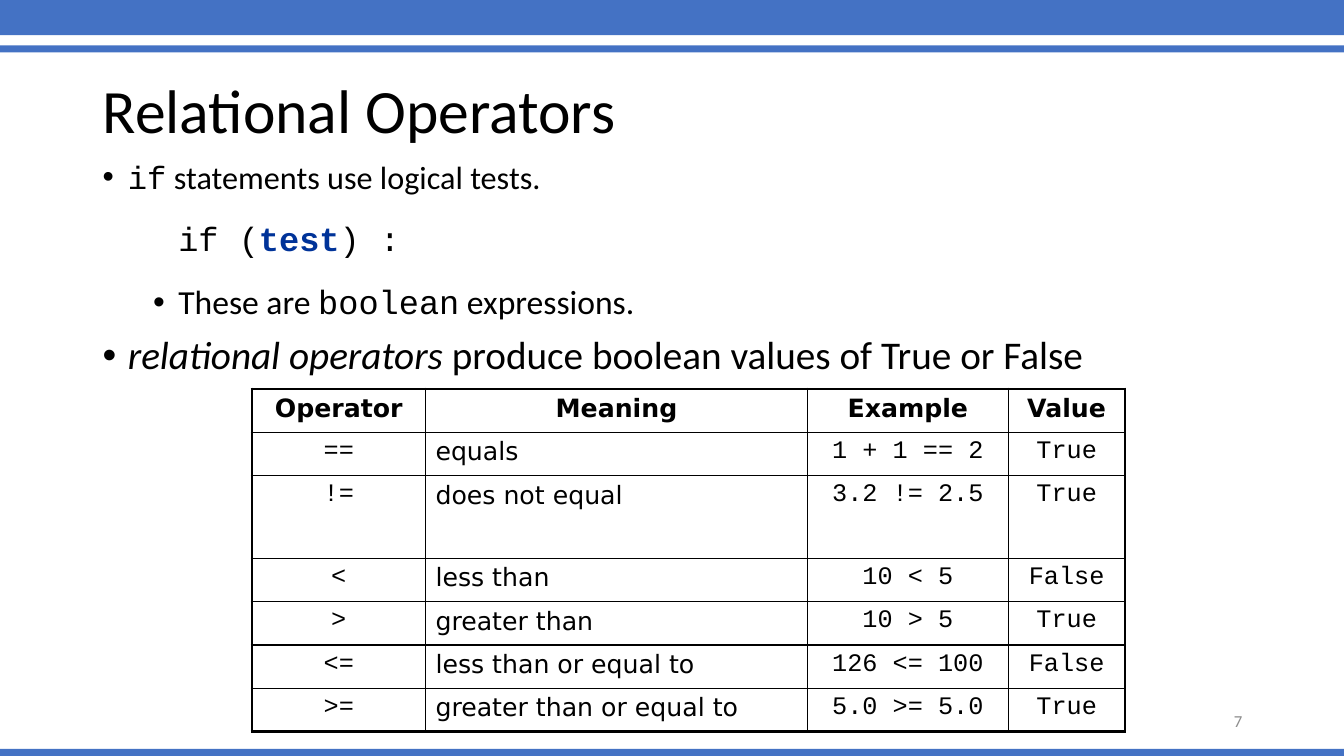
from lxml import etree
from pptx import Presentation
from pptx import util as u
from pptx.dml.color import RGBColor
from pptx.enum import shapes, text
from pptx.oxml.ns import qn

BLACK = RGBColor(0x00, 0x00, 0x00)
BLUE = RGBColor(0x44, 0x72, 0xC4)
NAVY = RGBColor(0x00, 0x33, 0x99)
GREY = RGBColor(0x8C, 0x8C, 0x8C)
SANS, MONO, WIDE = "Calibri", "Courier New", "DejaVu Sans"
LEFT, MID, RIGHT = text.PP_ALIGN.LEFT, text.PP_ALIGN.CENTER, text.PP_ALIGN.RIGHT

WIDTH, HEIGHT = 1333, 750
BARS = [(0, 35), (45, 7), (743, 7)]  # top, height
TITLE = "Relational Operators"
PAGE = "7"

# margin in px, bullet, space before in points, size, runs (words, font, style)
POINTS = [
    (25, True, 10, 23, [("if", MONO, {}), (" statements use logical tests.", SANS, {})]),
    (75, False, 19, 24, [("if (", MONO, {}),
                         ("test", MONO, {"color": NAVY, "bold": True}),
                         (") :", MONO, {})]),
    (75, True, 19, 24, [("These are ", SANS, {}), ("boolean", MONO, {}),
                        (" expressions.", SANS, {})]),
    (25, True, 10, 28, [("relational operators", SANS, {"italic": True}),
                        (" produce boolean values of True or False", SANS, {})]),
]

ROWS = [
    ("Operator", "Meaning", "Example", "Value"),
    ("==", "equals", "1 + 1 == 2", "True"),
    ("!=", "does not equal", "3.2 != 2.5", "True"),
    ("<", "less than", "10 < 5", "False"),
    (">", "greater than", "10 > 5", "True"),
    ("<=", "less than or equal to", "126 <= 100", "False"),
    (">=", "greater than or equal to", "5.0 >= 5.0", "True"),
]
COLS = [172, 379, 199, 116]
HIGH = [43, 43, 82, 43, 43, 43, 43]
MEANING = 1
THIN, THICK = 1, 2.25


def px(n):
    """Turn px, 100 to the inch, into EMU."""
    return u.Emu(n * 9144)


def add_run(para, words, font, size, color=BLACK, bold=False, italic=False):
    run = para.add_run()
    run.text = words
    face = run.font
    face.name, face.size = font, u.Pt(size)
    face.bold, face.italic = bold, italic
    face.color.rgb = color


def add_box(slide, left, top, width, height, anchor):
    box = slide.shapes.add_textbox(px(left), px(top), px(width), px(height))
    frame = box.text_frame
    frame.word_wrap = True
    frame.vertical_anchor = anchor
    return frame


def indent(para, margin, bullet):
    props = para._p.get_or_add_pPr()
    props.set("marL", str(px(margin)))
    props.set("indent", str(px(-25 if bullet else 0)))
    if bullet:
        etree.SubElement(props, qn("a:buFont"), typeface="Arial")
        etree.SubElement(props, qn("a:buChar"), char="•")


def edge(cell, sides):
    """Draw the cell borders; sides maps L, R, T, B in order to points."""
    props = cell._tc.get_or_add_tcPr()
    for i, (side, points) in enumerate(sides.items()):
        line = etree.Element(qn("a:ln" + side), w=str(u.Pt(points)))
        fill = etree.SubElement(line, qn("a:solidFill"))
        etree.SubElement(fill, qn("a:srgbClr"), val=str(BLACK))
        props.insert(i, line)


def add_bars(slide):
    for top, height in BARS:
        bar = slide.shapes.add_shape(shapes.MSO_SHAPE.RECTANGLE, 0, px(top),
                                     px(WIDTH), px(height))
        bar.shadow.inherit = False
        bar.fill.solid()
        bar.fill.fore_color.rgb = BLUE
        bar.line.fill.background()


def add_points(slide):
    frame = add_box(slide, 92, 155, 1150, 495, text.MSO_ANCHOR.TOP)
    for i, (margin, bullet, before, size, runs) in enumerate(POINTS):
        para = frame.add_paragraph() if i else frame.paragraphs[0]
        para.line_spacing = 0.9
        para.space_before = u.Pt(before)
        indent(para, margin, bullet)
        for words, font, style in runs:
            add_run(para, words, font, size, **style)


def add_grid(slide):
    grid = slide.shapes.add_table(len(ROWS), len(COLS), px(250), px(386),
                                  px(sum(COLS)), px(sum(HIGH))).table
    grid.first_row = grid.horz_banding = False
    for col, width in zip(grid.columns, COLS):
        col.width = px(width)
    for row, height in zip(grid.rows, HIGH):
        row.height = px(height)
    for r, row in enumerate(ROWS):
        for c, words in enumerate(row):
            cell = grid.cell(r, c)
            cell.fill.background()
            head = r == 0
            para = cell.text_frame.paragraphs[0]
            para.alignment = LEFT if c == MEANING and not head else MID
            font = WIDE if head or c == MEANING else MONO
            add_run(para, words, font, 18, bold=head)
            outer = {"L": c == 0, "R": c == len(COLS) - 1,
                     "T": head, "B": r == len(ROWS) - 1}
            edge(cell, {s: THICK if out else THIN for s, out in outer.items()})


def main():
    deck = Presentation()
    deck.slide_width, deck.slide_height = px(WIDTH), px(HEIGHT)
    slide = deck.slides.add_slide(deck.slide_layouts[6])
    add_bars(slide)
    title = add_box(slide, 92, 40, 1150, 145, text.MSO_ANCHOR.MIDDLE).paragraphs[0]
    title.line_spacing = 0.9
    add_run(title, TITLE, SANS, 44)
    add_points(slide)
    add_grid(slide)
    page = add_box(slide, 942, 695, 300, 40, text.MSO_ANCHOR.MIDDLE).paragraphs[0]
    page.alignment = RIGHT
    add_run(page, PAGE, SANS, 12, GREY)
    deck.save("out.pptx")


if __name__ == "__main__":
    main()
